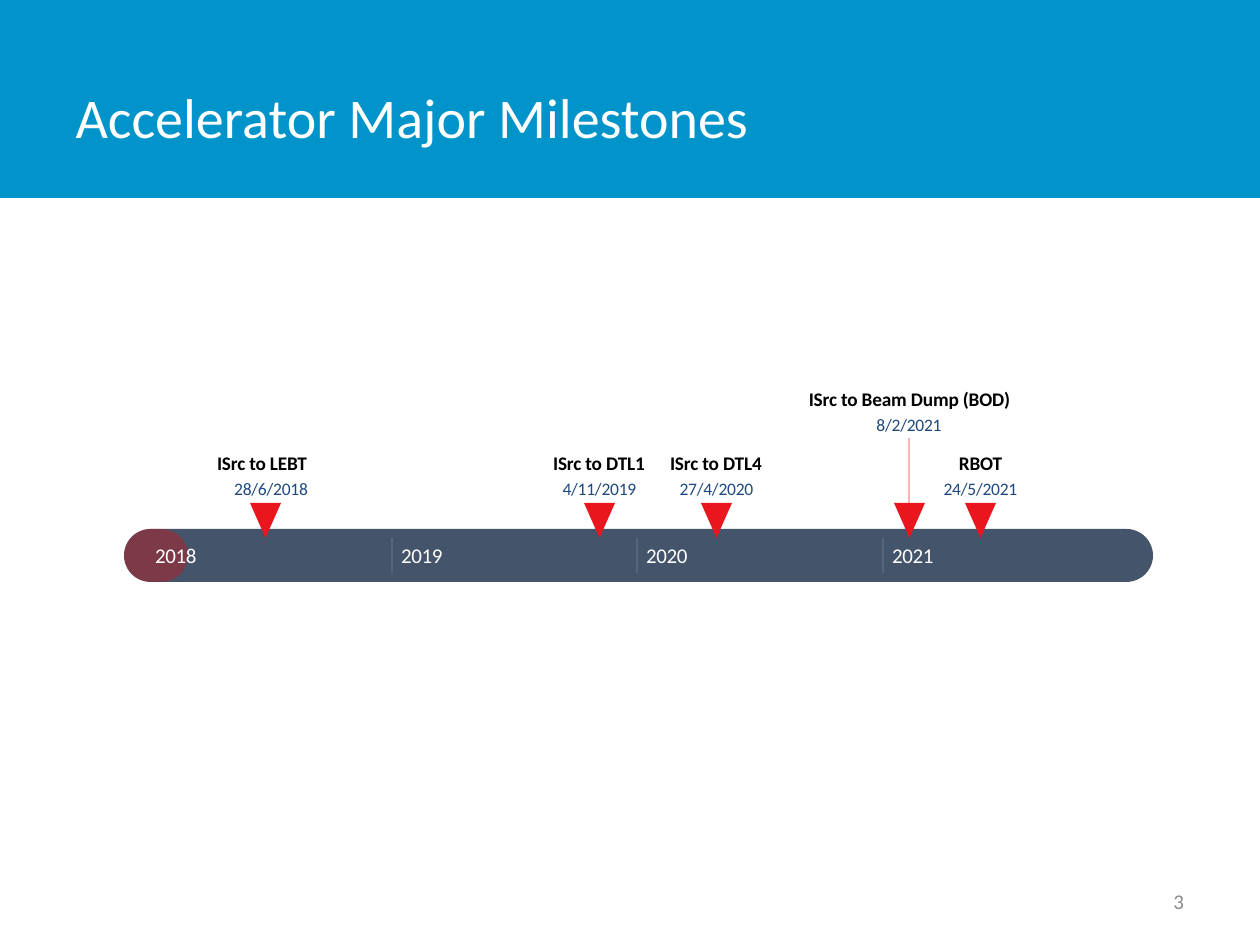
from dataclasses import dataclass

from lxml import etree
from pptx import Presentation
from pptx.dml.color import RGBColor
from pptx.enum import shapes, text
from pptx.oxml.ns import qn
from pptx.util import Emu, Pt

SCALE = 914400 / 126
FONT = "Calibri"
WHITE = RGBColor(0xFF, 0xFF, 0xFF)
BLACK = RGBColor(0x00, 0x00, 0x00)
BAND_BLUE = RGBColor(0x00, 0x94, 0xCA)
SLATE = RGBColor(0x44, 0x54, 0x6A)
ELAPSED_RED = RGBColor(0xFF, 0x00, 0x00)
MARKER_RED = RGBColor(0xEA, 0x16, 0x1E)
DATE_BLUE = RGBColor(0x1F, 0x49, 0x7E)
GRAY = RGBColor(0x8C, 0x8C, 0x8C)

BAR_LEFT, BAR_TOP, BAR_W, BAR_H = 124, 529, 1029, 53
LOW, HIGH = 451, 387
MARKER_W, MARKER_H, MARKER_TOP = 31, 35, 503


@dataclass
class Milestone:
    name: str
    date: str
    x: int
    name_w: int
    date_w: int
    top: int = LOW
    name_shift: int = 0
    date_shift: int = 0


MILESTONES = [
    Milestone("ISrc to LEBT", "28/6/2018", 265, 96, 82, name_shift=-3, date_shift=6),
    Milestone("ISrc to DTL1", "4/11/2019", 599, 94, 77),
    Milestone("ISrc to DTL4", "27/4/2020", 716, 94, 77),
    Milestone("ISrc to Beam Dump (BOD)", "8/2/2021", 909, 207, 68, top=HIGH),
    Milestone("RBOT", "24/5/2021", 980, 45, 77),
]


def px(n: float) -> Emu:
    return Emu(round(n * SCALE))


def set_alpha(fill, percent: int) -> None:
    clr = fill._xPr.find(".//" + qn("a:srgbClr"))
    etree.SubElement(clr, qn("a:alpha"), val=str(percent * 1000))


def add_shape(slide, kind, x: int, y: int, w: int, h: int, color: RGBColor):
    sp = slide.shapes.add_shape(kind, px(x), px(y), px(w), px(h))
    sp.shadow.inherit = False
    sp.fill.solid()
    sp.fill.fore_color.rgb = color
    sp.line.fill.background()
    return sp


def add_line(slide, x: int, top: int, bottom: int, color: RGBColor, width: float, alpha: int) -> None:
    line = slide.shapes.add_connector(
        shapes.MSO_CONNECTOR.STRAIGHT, px(x), px(top), px(x), px(bottom))
    line.line.color.rgb = color
    line.line.width = Pt(width)
    set_alpha(line.line.fill, alpha)
    etree.SubElement(line._element.spPr, qn("a:effectLst"))


def add_label(slide, words: str, x: int, y: int, w: int, h: int, size: int, color: RGBColor,
              align=text.PP_ALIGN.CENTER, bold: bool = False, spacing: int = 0) -> None:
    tf = slide.shapes.add_textbox(px(x), px(y), px(w), px(h)).text_frame
    tf.margin_left = tf.margin_right = tf.margin_top = tf.margin_bottom = 0
    tf.vertical_anchor = text.MSO_ANCHOR.MIDDLE
    tf.word_wrap = False
    p = tf.paragraphs[0]
    r = p.add_run()
    r.text = words
    p.alignment = align
    p.font.name, p.font.size, p.font.bold = FONT, Pt(size), bold
    p.font.color.rgb = color
    if spacing:
        r._r.get_or_add_rPr().set("spc", str(spacing))


def add_title(slide, words: str) -> None:
    sp = slide.shapes.title
    sp.left, sp.top, sp.width, sp.height = px(63), px(38), px(984), px(157)
    tf = sp.text_frame
    tf.text = words
    tf.vertical_anchor = text.MSO_ANCHOR.MIDDLE
    p = tf.paragraphs[0]
    p.alignment = text.PP_ALIGN.LEFT
    p.font.name, p.font.size = FONT, Pt(32)
    p.font.color.rgb = WHITE


def add_bar(slide) -> None:
    rounded = shapes.MSO_SHAPE.ROUNDED_RECTANGLE
    bar = add_shape(slide, rounded, BAR_LEFT, BAR_TOP, BAR_W, BAR_H, SLATE)
    elapsed = add_shape(slide, rounded, BAR_LEFT, BAR_TOP, 64, BAR_H, ELAPSED_RED)
    bar.adjustments[0] = elapsed.adjustments[0] = 0.5
    set_alpha(elapsed.fill, 30)
    for i, year in enumerate(range(2018, 2022)):
        x = round(155 + i * 245.67)
        if i:
            add_line(slide, x - 9, 538, 573, WHITE, 0.5, 30)
        add_label(slide, str(year), x, 543, 42, 25, 12, WHITE,
                  text.PP_ALIGN.LEFT, spacing=-20)


def add_milestone(slide, m: Milestone) -> None:
    add_label(slide, m.name, m.x + m.name_shift - m.name_w // 2, m.top, m.name_w, 24,
              11, BLACK, bold=True, spacing=-10)
    add_label(slide, m.date, m.x + m.date_shift - m.date_w // 2, m.top + 27, m.date_w, 21,
              10, DATE_BLUE, spacing=-10)
    marker = add_shape(slide, shapes.MSO_SHAPE.ISOSCELES_TRIANGLE, m.x - MARKER_W // 2,
                       MARKER_TOP, MARKER_W, MARKER_H, MARKER_RED)
    marker._element.spPr.xfrm.set("flipV", "1")


def main() -> None:
    prs = Presentation()
    prs.slide_width, prs.slide_height = px(1260), px(945)
    slide = prs.slides.add_slide(prs.slide_layouts[5])
    band = add_shape(slide, shapes.MSO_SHAPE.RECTANGLE, 0, 0, 1260, 198, BAND_BLUE)
    slide.shapes.title._element.addprevious(band._element)
    add_title(slide, "Accelerator Major Milestones")
    add_label(slide, "3", 903, 876, 281, 50, 12, GRAY, text.PP_ALIGN.RIGHT)
    for m in MILESTONES:
        if m.top == HIGH:
            add_line(slide, m.x, m.top + 51, 520, MARKER_RED, 0.75, 50)
    add_bar(slide)
    for m in MILESTONES:
        add_milestone(slide, m)
    prs.save("out.pptx")


if __name__ == "__main__":
    main()
